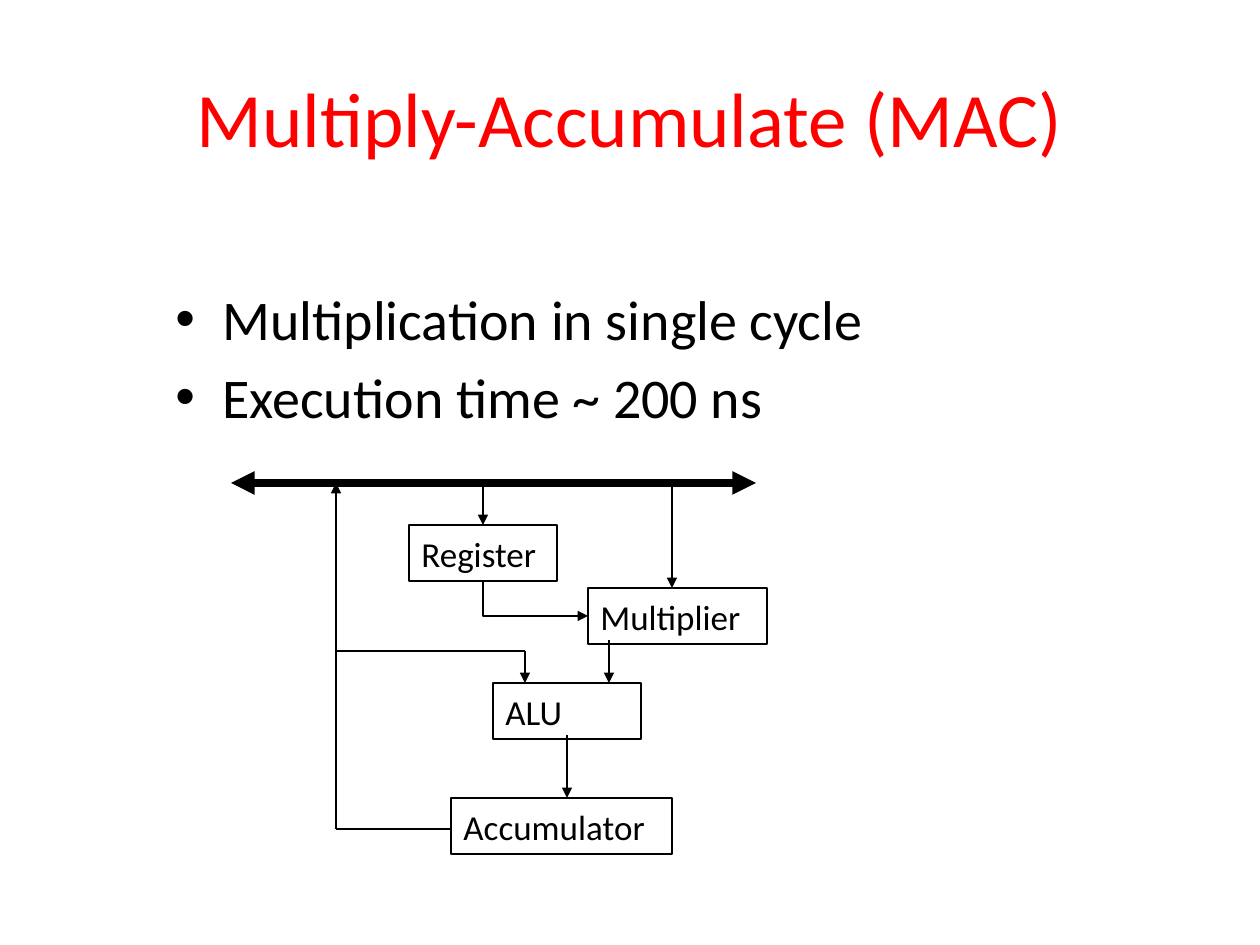
from dataclasses import dataclass

import pptx
import pptx.dml.color
import pptx.enum.shapes
import pptx.enum.text
import pptx.oxml.ns
import pptx.util
from lxml import etree

EMU_PER_PX = 914400 / 126


@dataclass(frozen=True)
class Theme:
    font: str = "Calibri"
    title: str = "FF0000"
    ink: str = "000000"
    title_pt: int = 44
    body_pt: int = 32
    label_pt: int = 20
    line_pt: float = 0.75
    bus_pt: float = 4.5


@dataclass(frozen=True)
class Block:
    label: str
    x: int
    y: int
    w: int
    h: int = 56


@dataclass(frozen=True)
class Wire:
    x1: int
    y1: int
    x2: int
    y2: int
    head: bool = False
    tail: bool = True
    width: float = Theme.line_pt


THEME = Theme()
BUS_Y = 483
FEEDBACK_X = 336
FEEDBACK_Y = 651
ACC_Y = 829

BULLETS = ["Multiplication in single cycle", "Execution time ~ 200 ns"]

REGISTER = Block("Register", 409, 525, 148)
MULTIPLIER = Block("Multiplier", 588, 588, 179)
ALU = Block("ALU", 493, 683, 148)
ACCUMULATOR = Block("Accumulator", 451, 798, 221)
BLOCKS = [REGISTER, MULTIPLIER, ALU, ACCUMULATOR]

WIRES = [
    Wire(231, BUS_Y, 756, BUS_Y, head=True, width=THEME.bus_pt),
    Wire(483, BUS_Y, 483, REGISTER.y),
    Wire(672, BUS_Y, 672, MULTIPLIER.y),
    Wire(609, 640, 609, ALU.y),
    Wire(567, 735, 567, ACCUMULATOR.y),
    Wire(ACCUMULATOR.x, ACC_Y, FEEDBACK_X, ACC_Y, tail=False),
    Wire(FEEDBACK_X, ACC_Y, FEEDBACK_X, BUS_Y),
    Wire(FEEDBACK_X, FEEDBACK_Y, 525, FEEDBACK_Y, tail=False),
    Wire(525, FEEDBACK_Y, 525, ALU.y),
]


def px(n: float) -> pptx.util.Emu:
    return pptx.util.Emu(round(n * EMU_PER_PX))


def rgb(color: str) -> pptx.dml.color.RGBColor:
    return pptx.dml.color.RGBColor.from_string(color)


def sub(parent, tag: str, **attrs: str):
    return etree.SubElement(parent, pptx.oxml.ns.qn(tag), attrs)


def style_text(tf, size: int, color: str) -> None:
    tf.word_wrap = True
    for p in tf.paragraphs:
        for r in p.runs:
            r.font.name = THEME.font
            r.font.size = pptx.util.Pt(size)
            r.font.color.rgb = rgb(color)


def add_title(s, text: str) -> None:
    tf = s.shapes.add_textbox(px(63), px(38), px(1134), px(158)).text_frame
    tf.text = text
    tf.vertical_anchor = pptx.enum.text.MSO_ANCHOR.MIDDLE
    tf.paragraphs[0].alignment = pptx.enum.text.PP_ALIGN.CENTER
    style_text(tf, THEME.title_pt, THEME.title)


def add_bullets(s, lines: list[str]) -> None:
    tf = s.shapes.add_textbox(px(163), px(278), px(1071), px(184)).text_frame
    tf.text = "\n".join(lines)
    for p in tf.paragraphs:
        pPr = p._p.get_or_add_pPr()
        pPr.set("marL", str(px(47)))
        pPr.set("indent", str(px(-47)))
        sub(sub(pPr, "a:spcBef"), "a:spcPct", val="20000")
        sub(pPr, "a:buFont", typeface="Arial")
        sub(pPr, "a:buChar", char="•")
    style_text(tf, THEME.body_pt, THEME.ink)


def add_block(s, block: Block) -> None:
    sp = s.shapes.add_shape(pptx.enum.shapes.MSO_SHAPE.RECTANGLE,
                            px(block.x), px(block.y), px(block.w), px(block.h))
    sp.shadow.inherit = False
    sp.fill.background()
    sp.line.color.rgb = rgb(THEME.ink)
    sp.line.width = pptx.util.Pt(THEME.line_pt)
    tf = sp.text_frame
    tf.text = block.label
    tf.vertical_anchor = pptx.enum.text.MSO_ANCHOR.BOTTOM
    tf.paragraphs[0].alignment = pptx.enum.text.PP_ALIGN.LEFT
    style_text(tf, THEME.label_pt, THEME.ink)


def add_wire(s, wire: Wire):
    cx = s.shapes.add_connector(pptx.enum.shapes.MSO_CONNECTOR.STRAIGHT,
                                px(wire.x1), px(wire.y1), px(wire.x2), px(wire.y2))
    cx.line.color.rgb = rgb(THEME.ink)
    cx.line.width = pptx.util.Pt(wire.width)
    ln = cx.line._get_or_add_ln()
    if wire.head:
        sub(ln, "a:headEnd", type="triangle")
    if wire.tail:
        sub(ln, "a:tailEnd", type="triangle")
    sub(cx._element.spPr, "a:effectLst")
    return cx


def add_down_then_right(s, x1: int, y1: int, x2: int, y2: int) -> None:
    mid_x, mid_y = (x1 + x2) / 2, (y1 + y2) / 2
    half_w, half_h = (y2 - y1) / 2, (x2 - x1) / 2
    cx = add_wire(s, Wire(mid_x + half_w, mid_y - half_h,
                          mid_x - half_w, mid_y + half_h))
    spPr = cx._element.spPr
    spPr.find(pptx.oxml.ns.qn("a:xfrm")).set("rot", str(270 * 60000))
    spPr.find(pptx.oxml.ns.qn("a:prstGeom")).set("prst", "bentConnector2")


def main() -> None:
    prs = pptx.Presentation()
    prs.slide_width, prs.slide_height = px(1260), px(945)
    s = prs.slides.add_slide(prs.slide_layouts[6])
    add_title(s, "Multiply-Accumulate (MAC)")
    add_bullets(s, BULLETS)
    for block in BLOCKS:
        add_block(s, block)
    for wire in WIRES:
        add_wire(s, wire)
    add_down_then_right(s, REGISTER.x + REGISTER.w // 2, REGISTER.y + REGISTER.h,
                        MULTIPLIER.x, MULTIPLIER.y + MULTIPLIER.h // 2)
    prs.save("out.pptx")


if __name__ == "__main__":
    main()
